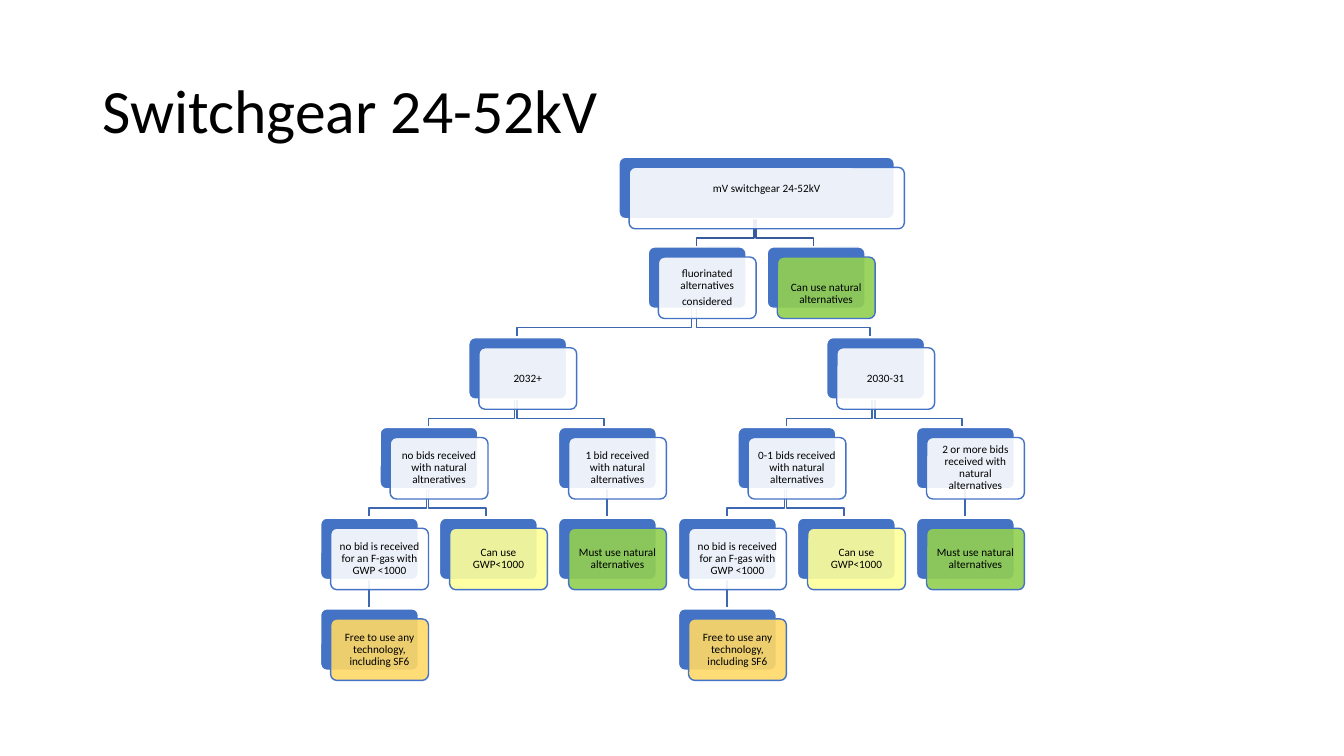
from dataclasses import dataclass, field

from lxml.etree import SubElement
from pptx import Presentation
from pptx.dml.color import RGBColor
from pptx.enum.shapes import MSO_CONNECTOR, MSO_SHAPE
from pptx.enum.text import MSO_ANCHOR, PP_ALIGN
from pptx.oxml.ns import qn
from pptx.util import Pt

SCALE = 9144
TREE_LEFT, COLUMN_STEP = 317, 59.17
TREE_TOP, ROW_STEP = 156, 89.6
CARD_WIDTH, CARD_HEIGHT, CARD_OFFSET = 97, 61, 10
ELBOW_DROP, LINK_DROP, BRANCH_RATIO = 19, 27, 0.97


@dataclass(frozen=True)
class Theme:
    """Colours, typeface and type sizes of the slide."""
    font: str = "Calibri"
    title_size: float = 44
    card_size: float = 8
    card_gap: float = 2.8
    text: str = "000000"
    card: str = "4472C4"
    white: str = "FFFFFF"
    root_link: str = "365B9D"
    link: str = "3E67B2"
    natural: str = "92D050"
    low_gwp: str = "FFFF99"
    free_choice: str = "FFD966"


THEME = Theme()


@dataclass
class Decision:
    """A card of the tree, placed by its column."""
    column: float
    paragraphs: list
    children: list = field(default_factory=list)
    fill: str = THEME.white
    width: int = CARD_WIDTH
    top_inset: int = 5
    bottom_inset: int = 5

    def center(self):
        """Return the horizontal centre in px."""
        return round(TREE_LEFT + self.column * COLUMN_STEP + CARD_WIDTH / 2)


def px(length):
    """Turn px into EMU."""
    return round(length * SCALE)


def color(value):
    """Turn a hex value into a colour."""
    return RGBColor.from_string(value)


def row_top(row):
    """Return the top of a row of cards in px."""
    return int(TREE_TOP + row * ROW_STEP)


def write_paragraphs(text_frame, texts, size):
    """Write each text as one run in its own paragraph."""
    text_frame.word_wrap = True
    text_frame.vertical_anchor = MSO_ANCHOR.MIDDLE
    for index, text in enumerate(texts):
        paragraph = text_frame.add_paragraph() if index else text_frame.paragraphs[0]
        paragraph.line_spacing = 0.9
        run = paragraph.add_run()
        run.text = text
        run.font.name = THEME.font
        run.font.size = Pt(size)
        run.font.color.rgb = color(THEME.text)


def add_title(slide, text):
    """Add the slide title."""
    box = slide.shapes.add_textbox(px(92), px(40), px(1150), px(145))
    write_paragraphs(box.text_frame, [text], THEME.title_size)


def add_panel(slide, left, top, width, fill, line):
    """Add one rounded panel of a card."""
    panel = slide.shapes.add_shape(
        MSO_SHAPE.ROUNDED_RECTANGLE, px(left), px(top), px(width), px(CARD_HEIGHT))
    panel.adjustments[0] = 0.1
    panel.shadow.inherit = False
    panel.fill.solid()
    panel.fill.fore_color.rgb = color(fill)
    panel.line.color.rgb = color(line)
    panel.line.width = Pt(1)
    return panel


def add_card(slide, decision, row):
    """Add a backing panel and a translucent text panel."""
    left = decision.center() - decision.width // 2
    top = row_top(row)
    add_panel(slide, left, top, decision.width, THEME.card, THEME.white)
    front = add_panel(slide, left + CARD_OFFSET, top + CARD_OFFSET,
                      decision.width, decision.fill, THEME.card)
    fill_color = front.element.spPr.find(qn("a:solidFill"))[0]
    SubElement(fill_color, qn("a:alpha"), val="90000")
    frame = front.text_frame
    frame.margin_left = frame.margin_right = px(5)
    frame.margin_top = px(decision.top_inset)
    frame.margin_bottom = px(decision.bottom_inset)
    write_paragraphs(frame, decision.paragraphs, THEME.card_size)
    for paragraph in frame.paragraphs:
        paragraph.alignment = PP_ALIGN.CENTER
        paragraph.space_after = Pt(THEME.card_gap)


def add_straight_link(slide, x, top):
    """Add a vertical line to an only child."""
    link = slide.shapes.add_connector(
        MSO_CONNECTOR.STRAIGHT, px(x), px(top), px(x), px(top + LINK_DROP))
    return link


def add_elbow_link(slide, start, end, top):
    """Add a bent line from a parent to one of two children."""
    left = min(start, end)
    start, end = (round(left + (x - left) * BRANCH_RATIO) for x in (start, end))
    builder = slide.shapes.build_freeform(start, top, scale=SCALE)
    elbow = top + ELBOW_DROP
    builder.add_line_segments(
        [(start, elbow), (end, elbow), (end, top + LINK_DROP)], close=False)
    link = builder.convert_to_shape()
    link.fill.background()
    return link


def add_links(slide, decision, row=0):
    """Link a decision to its children, and these to theirs."""
    top = row_top(row) + CARD_HEIGHT
    for child in decision.children:
        start, end = decision.center(), child.center()
        if start == end:
            link = add_straight_link(slide, start, top)
        else:
            link = add_elbow_link(slide, start, end, top)
        link.line.color.rgb = color(THEME.link if row else THEME.root_link)
        link.line.width = Pt(1)
        SubElement(link.element.spPr, qn("a:effectLst"))
        add_links(slide, child, row + 1)


def add_cards(slide, decision, row=0):
    """Add the card of a decision and those below it."""
    add_card(slide, decision, row)
    for child in decision.children:
        add_cards(slide, child, row + 1)


def year_branch(column, year, few_bids, enough_bids):
    """Return the decisions for one period, its leftmost card at column."""
    free_choice = Decision(column, ["Free to use any technology, including SF6"],
                           fill=THEME.free_choice)
    no_low_gwp = Decision(column, ["no bid is received for an F-gas with GWP <1000"],
                          [free_choice])
    low_gwp = Decision(column + 2, ["Can use GWP<1000"], fill=THEME.low_gwp)
    natural = Decision(column + 4, ["Must use natural alternatives"], fill=THEME.natural)
    return Decision(column + 2.5, [year], [
        Decision(column + 1, [few_bids], [no_low_gwp, low_gwp]),
        Decision(column + 4, [enough_bids], [natural]),
    ])


def switchgear_tree():
    """Return the whole decision tree."""
    considered = Decision(5.5, ["fluorinated alternatives", "considered"], [
        year_branch(0, "2032+", "no bids received with natural altneratives",
                    "1 bid received with natural alternatives"),
        year_branch(6, "2030-31", "0-1 bids received with natural alternatives",
                    "2 or more bids received with natural alternatives"),
    ])
    natural = Decision(7.5, ["Can use natural alternatives"],
                       fill=THEME.natural, top_inset=17)
    return Decision(6.5, ["mV switchgear 24-52kV"], [considered, natural],
                    width=273, bottom_inset=23)


def main():
    """Build and save the slide."""
    presentation = Presentation()
    presentation.slide_width = px(1333)
    presentation.slide_height = px(750)
    slide = presentation.slides.add_slide(presentation.slide_layouts[6])
    add_title(slide, "Switchgear 24-52kV")
    tree = switchgear_tree()
    add_links(slide, tree)
    add_cards(slide, tree)
    presentation.save("out.pptx")


if __name__ == "__main__":
    main()
